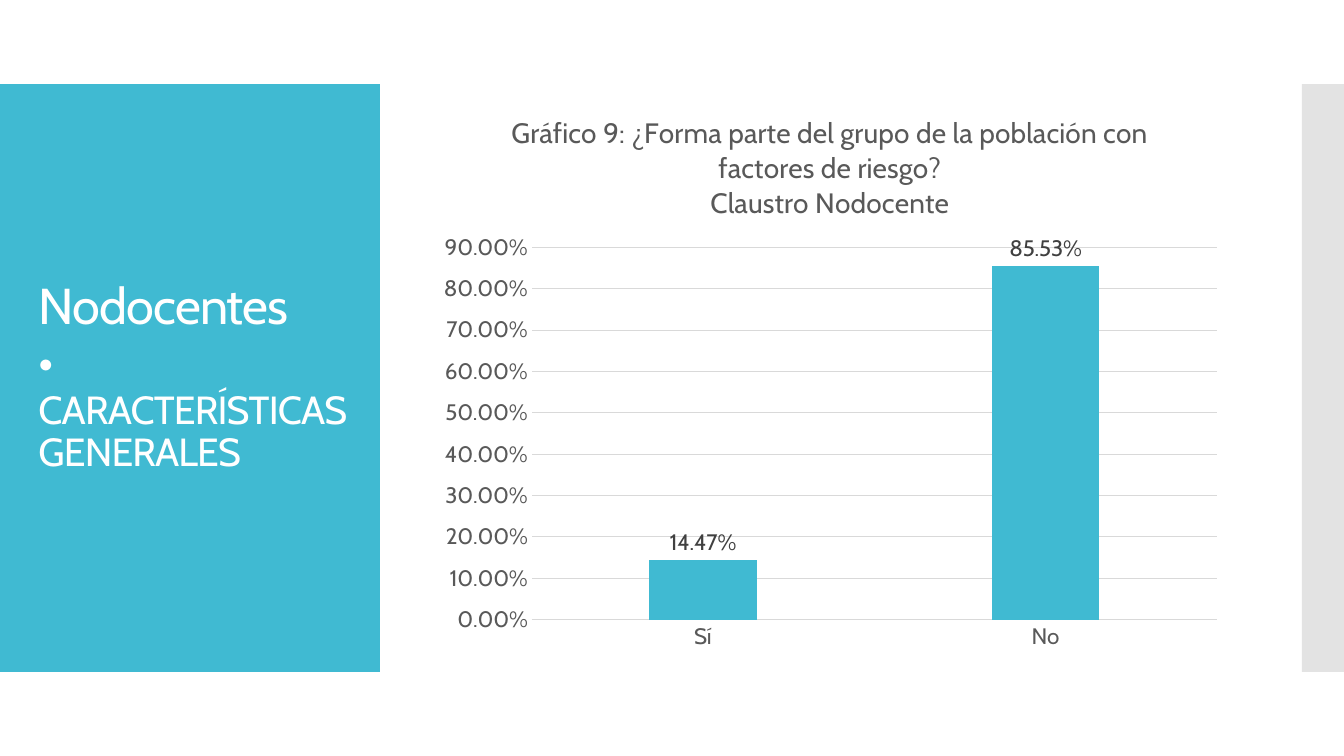
from dataclasses import dataclass
from typing import Optional

from lxml.etree import SubElement
from pptx import Presentation
from pptx.chart.chart import Chart
from pptx.chart.data import CategoryChartData
from pptx.dml.color import RGBColor
from pptx.enum.chart import XL_CHART_TYPE, XL_LABEL_POSITION, XL_TICK_MARK
from pptx.enum.shapes import MSO_SHAPE
from pptx.enum.text import MSO_ANCHOR
from pptx.oxml.ns import qn
from pptx.slide import Slide
from pptx.util import Inches, Pt

COLUMNS, ROWS = 160, 90
CELL = Inches(1 / 12)


@dataclass(frozen=True)
class Theme:
    font: str = "Cabin"
    accent: str = "40BAD2"
    strip: str = "C8C8C8"
    heading: str = "FFFFFF"
    axis_text: str = "595959"
    label_text: str = "404040"
    rule: str = "D9D9D9"
    heading_size: float = 36
    subheading_size: float = 28
    chart_title_size: float = 20
    chart_size: float = 16
    rule_width: float = 0.75


@dataclass(frozen=True)
class Area:
    """A block of grid cells."""
    column: float
    row: float
    columns: float
    rows: float

    def emu(self) -> tuple[int, ...]:
        return tuple(round(n * CELL) for n in (self.column, self.row, self.columns, self.rows))


@dataclass(frozen=True)
class Band:
    area: Area
    color: str
    opacity: Optional[int] = None


@dataclass(frozen=True)
class HeadingLine:
    text: str
    size: float


THEME = Theme()
BANDS = (
    Band(Area(0, 10, 45.24, 70), THEME.accent),
    Band(Area(155, 10, 5, 70), THEME.strip, opacity=50),
)
HEADING_AREA = Area(3.4, 14.8, 40.2, 60.4)
HEADING = (
    HeadingLine("Nodocentes", THEME.heading_size),
    HeadingLine("•", THEME.heading_size),
    HeadingLine("CARACTERÍSTICAS GENERALES", THEME.subheading_size),
)
CHART_AREA = Area(50.8, 11.3, 96, 67.2)
CHART_TITLE = (
    "Gráfico 9: ¿Forma parte del grupo de la población con factores de riesgo?",
    "Claustro Nodocente",
)
RISK_SHARES = {"Sí": 0.1447, "No": 0.8553}
PERCENT = "0.00%"
PLOT_SHARES = {"x": 0.13, "y": 0.27, "w": 0.85, "h": 0.66}


def style_font(font, size: float, color: str) -> None:
    font.name = THEME.font
    font.size = Pt(size)
    font.bold = False
    font.color.rgb = RGBColor.from_string(color)


def style_rule(line) -> None:
    line.color.rgb = RGBColor.from_string(THEME.rule)
    line.width = Pt(THEME.rule_width)


def draw_band(slide: Slide, band: Band) -> None:
    shape = slide.shapes.add_shape(MSO_SHAPE.RECTANGLE, *band.area.emu())
    shape.shadow.inherit = False
    shape.line.fill.background()
    shape.fill.solid()
    shape.fill.fore_color.rgb = RGBColor.from_string(band.color)
    if band.opacity is not None:
        color = shape.fill._xPr.find(".//" + qn("a:srgbClr"))
        SubElement(color, qn("a:alpha"), val=str(band.opacity * 1000))


def draw_heading(slide: Slide) -> None:
    frame = slide.shapes.add_textbox(*HEADING_AREA.emu()).text_frame
    frame.word_wrap = True
    frame.vertical_anchor = MSO_ANCHOR.MIDDLE
    paragraph = frame.paragraphs[0]
    paragraph.line_spacing = 0.9
    for index, line in enumerate(HEADING):
        if index:
            paragraph.add_line_break()
        run = paragraph.add_run()
        run.text = line.text
        style_font(run.font, line.size, THEME.heading)
        run.font._element.set("spc", "-60")


def write_chart_title(chart: Chart) -> None:
    chart.has_title = True
    chart.chart_title.include_in_layout = False
    frame = chart.chart_title.text_frame
    for index, text in enumerate(CHART_TITLE):
        paragraph = frame.add_paragraph() if index else frame.paragraphs[0]
        run = paragraph.add_run()
        run.text = text
        style_font(run.font, THEME.chart_title_size, THEME.axis_text)


def place_plot(chart: Chart) -> None:
    """Fix the inner plot area, as shares of the chart."""
    plot_area = chart._chartSpace.find(".//" + qn("c:plotArea"))
    layout = plot_area.find(qn("c:layout"))
    if layout is None:
        layout = SubElement(plot_area, qn("c:layout"))
        plot_area.insert(0, layout)
    manual = SubElement(layout, qn("c:manualLayout"))
    SubElement(manual, qn("c:layoutTarget"), val="inner")
    for side in ("x", "y"):
        SubElement(manual, qn(f"c:{side}Mode"), val="edge")
    for side, share in PLOT_SHARES.items():
        SubElement(manual, qn(f"c:{side}"), val=str(share))


def draw_risk_chart(slide: Slide) -> None:
    data = CategoryChartData(number_format=PERCENT)
    data.categories = list(RISK_SHARES)
    data.add_series("Series 1", list(RISK_SHARES.values()))
    chart = slide.shapes.add_chart(
        XL_CHART_TYPE.COLUMN_CLUSTERED, *CHART_AREA.emu(), data).chart
    chart.has_legend = False
    style_font(chart.font, THEME.chart_size, THEME.axis_text)
    write_chart_title(chart)
    place_plot(chart)

    for axis in (chart.category_axis, chart.value_axis):
        axis.major_tick_mark = axis.minor_tick_mark = XL_TICK_MARK.NONE
        style_font(axis.tick_labels.font, THEME.chart_size, THEME.axis_text)
    style_rule(chart.category_axis.format.line)
    shares = chart.value_axis
    shares.format.line.fill.background()
    style_rule(shares.major_gridlines.format.line)
    shares.minimum_scale, shares.maximum_scale, shares.major_unit = 0, 0.9, 0.1
    shares.tick_labels.number_format = PERCENT
    shares.tick_labels.number_format_is_linked = False

    plot = chart.plots[0]
    plot.gap_width, plot.overlap = 219, -27
    plot.vary_by_categories = False
    answers = plot.series[0]
    answers.format.fill.solid()
    answers.format.fill.fore_color.rgb = RGBColor.from_string(THEME.accent)
    labels = answers.data_labels
    labels.show_value = True
    labels.position = XL_LABEL_POSITION.OUTSIDE_END
    labels.number_format = PERCENT
    labels.number_format_is_linked = False
    style_font(labels.font, THEME.chart_size, THEME.label_text)


def main() -> None:
    deck = Presentation()
    deck.slide_width, deck.slide_height = COLUMNS * CELL, ROWS * CELL
    slide = deck.slides.add_slide(deck.slide_layouts[6])
    for band in BANDS:
        draw_band(slide, band)
    draw_heading(slide)
    draw_risk_chart(slide)
    deck.save("out.pptx")


if __name__ == "__main__":
    main()
